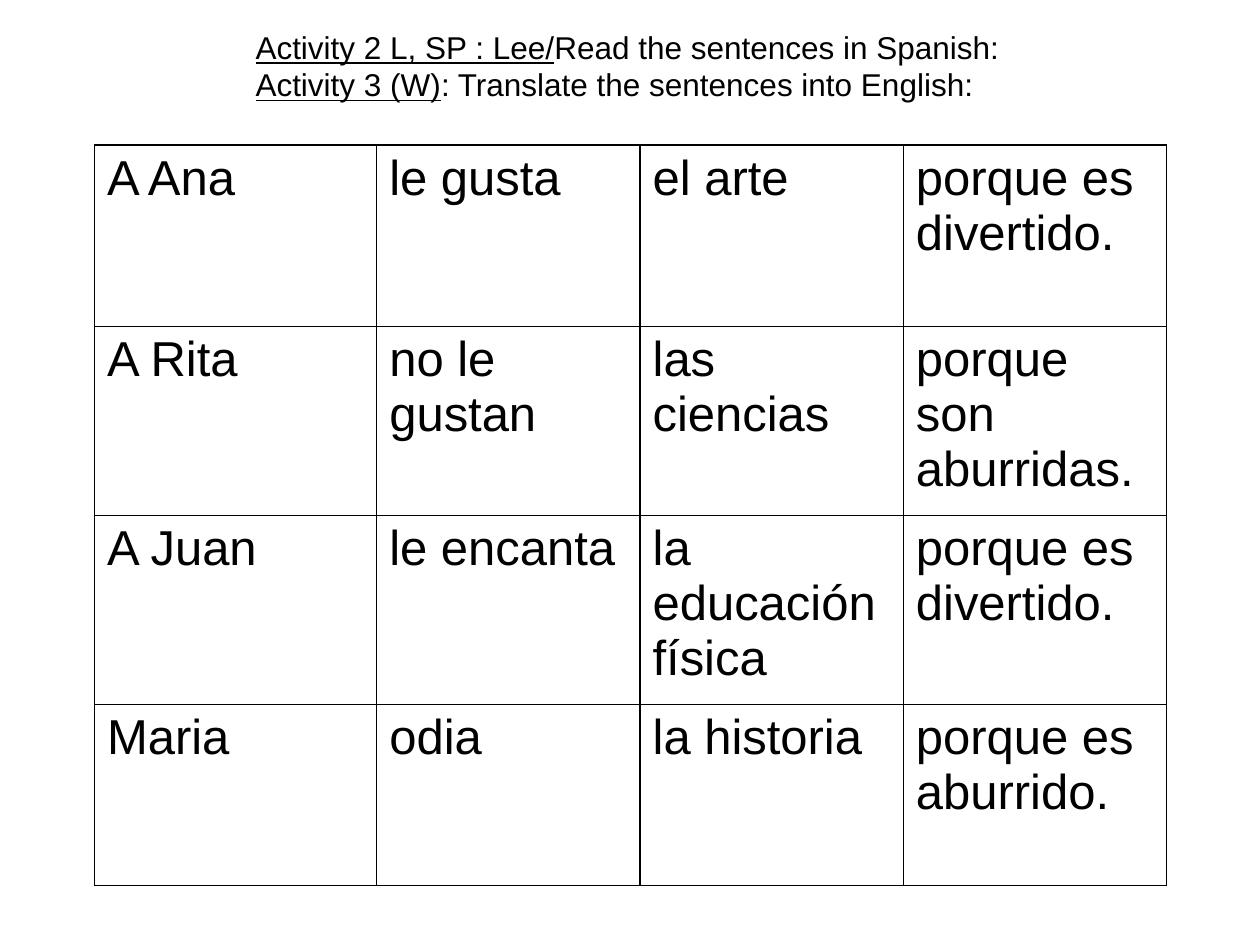
import pptx
import pptx.util
import pptx.dml.color
import pptx.enum.text
import pptx.oxml
import pptx.oxml.ns

THEME = {
    "font": "Arial",
    "ink": pptx.dml.color.RGBColor(0x00, 0x00, 0x00),
    "paper": pptx.dml.color.RGBColor(0xFF, 0xFF, 0xFF),
    "heading_size": pptx.util.Pt(18),
    "cell_size": pptx.util.Pt(28),
    "border": pptx.util.Pt(1),
}
COLUMNS = [2.24, 2.09, 2.09, 2.09]
ROWS = [1.44, 1.5, 1.5, 1.44]
SENTENCES = [
    ["A Ana", "le gusta", "el arte", "porque es divertido."],
    ["A Rita", "no le gustan", "las ciencias", "porque son aburridas."],
    ["A Juan", "le encanta", "la educación física", "porque es divertido."],
    ["Maria", "odia", "la historia", "porque es aburrido."],
]
# Each heading line: underlined label, then plain instruction
HEADINGS = [
    ("Activity 2 L, SP : Lee/", "Read the sentences in Spanish:"),
    ("Activity 3 (W)", ": Translate the sentences into English:"),
]


def add_run(paragraph, text, size, underline=False):
    run = paragraph.add_run()
    run.text = text
    run.font.color.rgb = THEME["ink"]
    formats = {"name": THEME["font"], "size": size, "underline": underline}
    for name, value in formats.items():
        setattr(run.font, name, value)


def add_borders(cell):
    properties = cell._tc.get_or_add_tcPr()
    for side in ("lnL", "lnR", "lnT", "lnB"):
        properties.append(pptx.oxml.parse_xml(
            f'<a:{side} {pptx.oxml.ns.nsdecls("a")} w="{THEME["border"]}">'
            f'<a:solidFill><a:srgbClr val="{THEME["ink"]}"/></a:solidFill></a:{side}>'
        ))


presentation = pptx.Presentation()
presentation.slide_width = pptx.util.Inches(10)
presentation.slide_height = pptx.util.Inches(7.5)
slide = presentation.slides.add_slide(presentation.slide_layouts[6])

# Sentence table
table = slide.shapes.add_table(
    len(ROWS), len(COLUMNS),
    pptx.util.Inches(0.75), pptx.util.Inches(1.15),
    pptx.util.Inches(sum(COLUMNS)), pptx.util.Inches(sum(ROWS)),
).table
for option in ("first_row", "horz_banding"):
    setattr(table, option, False)
for column, width in zip(table.columns, COLUMNS):
    column.width = pptx.util.Inches(width)
for row, height, sentence in zip(table.rows, ROWS, SENTENCES):
    row.height = pptx.util.Inches(height)
    for cell, text in zip(row.cells, sentence):
        add_borders(cell)
        cell.fill.solid()
        cell.fill.fore_color.rgb = THEME["paper"]
        add_run(cell.text_frame.paragraphs[0], text, THEME["cell_size"])

# Activity instructions
heading = slide.shapes.add_textbox(
    *(pptx.util.Inches(length) for length in (1.93, 0.17, 6.16, 1.01)))
frame = heading.text_frame
frame_formats = {
    "word_wrap": False,
    "auto_size": pptx.enum.text.MSO_AUTO_SIZE.SHAPE_TO_FIT_TEXT,
    "vertical_anchor": pptx.enum.text.MSO_ANCHOR.TOP,
}
for name, value in frame_formats.items():
    setattr(frame, name, value)
for index, (label, instruction) in enumerate(HEADINGS):
    paragraph = frame.add_paragraph() if index else frame.paragraphs[0]
    add_run(paragraph, label, THEME["heading_size"], underline=True)
    add_run(paragraph, instruction, THEME["heading_size"])

presentation.save("out.pptx")
